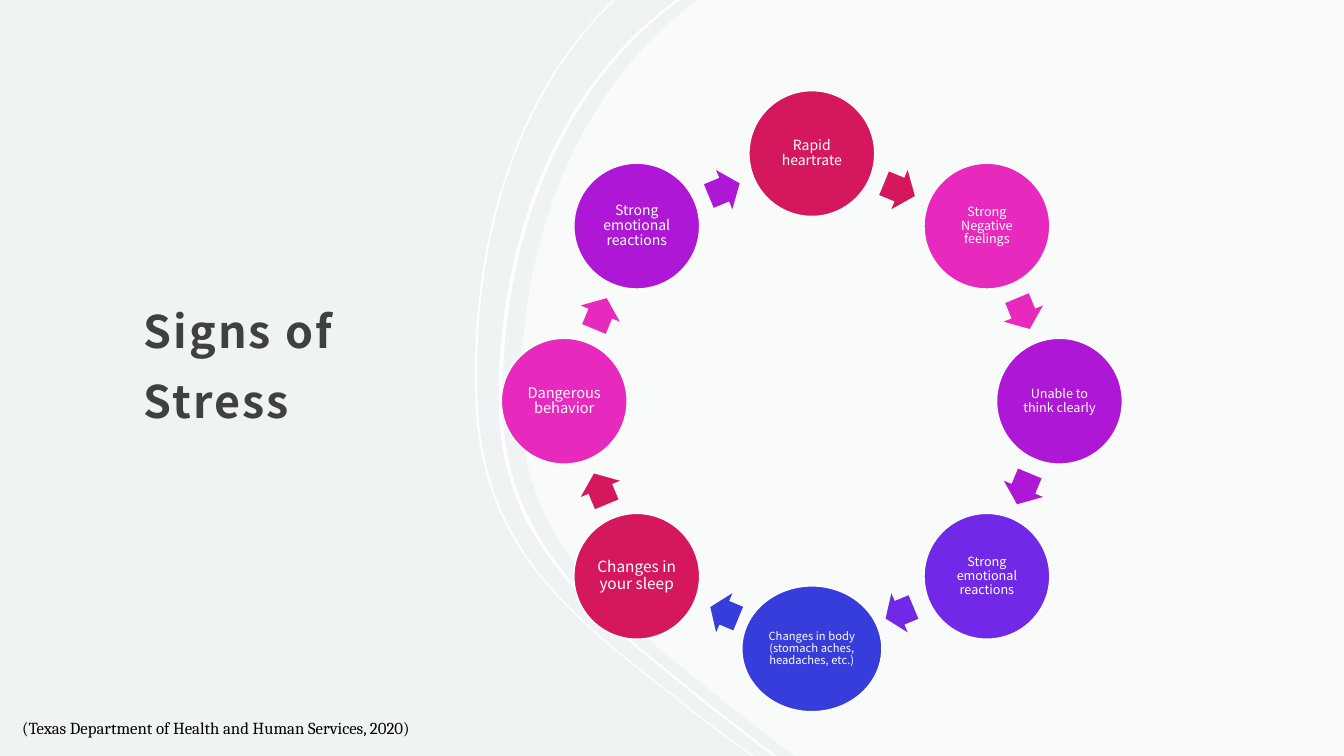
import math
from dataclasses import dataclass

import pptx
import pptx.dml.color
import pptx.enum.shapes
import pptx.enum.text
import pptx.oxml.ns
import pptx.shapes.autoshape
import pptx.slide
import pptx.text.text
import pptx.util
from lxml import etree

Cm = pptx.util.Cm
qn = pptx.oxml.ns.qn
Shape = pptx.shapes.autoshape.Shape
Slide = pptx.slide.Slide
TextFrame = pptx.text.text.TextFrame
MSO_SHAPE = pptx.enum.shapes.MSO_SHAPE
PP_ALIGN = pptx.enum.text.PP_ALIGN
MSO_ANCHOR = pptx.enum.text.MSO_ANCHOR
Point = tuple[float, float]


@dataclass(frozen=True)
class Theme:
    background: str = "F0F3F3"
    white: str = "FFFFFF"
    title: str = "404040"
    source: str = "000000"
    crimson: str = "D5175E"
    pink: str = "E729BE"
    purple: str = "AE17D5"
    violet: str = "7129E7"
    blue: str = "373DDB"
    font: str = "Noto Sans CJK JP"
    source_font: str = "Cambria"
    title_size: float = 32
    source_size: float = 12
    huge: float = 11
    large: float = 10.5
    normal: float = 10
    small: float = 9
    tiny: float = 8


@dataclass(frozen=True)
class Sign:
    text: str
    color: str
    size: float
    width: float = 3.17
    arrow: float = 0.84


THEME = Theme()
SLIDE_W, SLIDE_H = 33.87, 19.05
CENTER_X, CENTER_Y = 20.46, 10.11
RING_RADIUS, ARROW_RADIUS = 6.24, 5.77
CIRCLE_H, ARROW_H = 3.17, 1.07

SIGNS = (
    Sign("Rapid heartrate", THEME.crimson, THEME.normal),
    Sign("Strong Negative feelings", THEME.pink, THEME.small),
    Sign("Unable to think clearly", THEME.purple, THEME.small),
    Sign("Strong emotional reactions", THEME.violet, THEME.small, arrow=0.76),
    Sign("Changes in body (stomach aches, headaches, etc.)", THEME.blue, THEME.tiny, 3.53, 0.76),
    Sign("Changes in your sleep", THEME.crimson, THEME.huge),
    Sign("Dangerous behavior", THEME.pink, THEME.large),
    Sign("Strong emotional reactions", THEME.purple, THEME.normal),
)

EDGE_STEPS = [1, 3, 3, 3, 1]
PANEL_EDGE: list[Point] = [
    (17.6, 0), (17.55, 0.03),
    (14.71, 2.08), (13.11, 5.82), (13.11, 10.06),
    (13.11, 13.82), (15.67, 15.57), (18.31, 17.73),
    (18.8, 18.11), (19.28, 18.49), (19.74, 18.85),
    (20.04, SLIDE_H),
]
OUTER_EDGE: list[Point] = [
    (15.44, 0), (15.37, 0.08),
    (13, 2.39), (11.81, 6.1), (11.99, 10.21),
    (12.17, 14.1), (14.78, 15.82), (17.45, 17.93),
    (17.93, 18.31), (18.42, 18.67), (18.9, 19.02),
    (18.95, SLIDE_H),
]


def rgb(color: str) -> pptx.dml.color.RGBColor:
    return pptx.dml.color.RGBColor.from_string(color)


def paint(sp: Shape, color: str) -> None:
    sp.shadow.inherit = False
    sp.fill.solid()
    sp.fill.fore_color.rgb = rgb(color)
    sp.line.fill.background()


def shift(pts: list[Point], dx: float) -> list[Point]:
    return [(x + dx, y) for x, y in pts]


def bend(sp: Shape, steps: list[int]) -> None:
    lines = iter(list(sp._element.iter(qn("a:lnTo"))))
    for count in steps:
        first, *others = [next(lines) for _ in range(count)]
        if others:
            first.tag = qn("a:cubicBezTo")
        for line in others:
            first.append(line[0])
            line.getparent().remove(line)


def add_outline(s: Slide, pts: list[Point], steps: list[int]) -> Shape:
    corners = [(Cm(x), Cm(y)) for x, y in pts]
    builder = s.shapes.build_freeform(*corners[0])
    builder.add_line_segments(corners[1:], close=True)
    sp = builder.convert_to_shape()
    bend(sp, steps)
    paint(sp, THEME.white)
    return sp


def add_band(s: Slide, edge: list[Point], width: float) -> None:
    add_outline(s, edge + shift(edge, width)[::-1], EDGE_STEPS + [1] + EDGE_STEPS)


def set_opacity(sp: Shape, percent: int) -> None:
    color = next(sp._element.iter(qn("a:srgbClr")))
    etree.SubElement(color, qn("a:alpha")).set("val", str(percent * 1000))


def add_backdrop(s: Slide) -> None:
    s.background.fill.solid()
    s.background.fill.fore_color.rgb = rgb(THEME.background)
    corners = [(SLIDE_W, SLIDE_H), (SLIDE_W, 0)]
    panel = add_outline(s, PANEL_EDGE + corners, EDGE_STEPS + [1, 1])
    set_opacity(panel, 60)
    add_band(s, OUTER_EDGE, 0.05)
    add_band(s, shift(PANEL_EDGE, -0.54), 0.09)


def set_margins(tf: TextFrame, margin: float) -> None:
    tf.margin_left = tf.margin_right = tf.margin_top = tf.margin_bottom = Cm(margin)


def write(tf: TextFrame, text: str, size: float, color: str, font: str = THEME.font,
          bold: bool = False, spacing: float = 1.0, align: PP_ALIGN = PP_ALIGN.LEFT,
          anchor: MSO_ANCHOR = MSO_ANCHOR.MIDDLE) -> pptx.text.text._Run:
    tf.word_wrap = True
    tf.vertical_anchor = anchor
    p = tf.paragraphs[0]
    p.alignment = align
    p.line_spacing = spacing
    r = p.add_run()
    r.text = text
    r.font.name = font
    r.font.size = pptx.util.Pt(size)
    r.font.bold = bold
    r.font.color.rgb = rgb(color)
    return r


def add_centered(s: Slide, kind: MSO_SHAPE, radius: float, angle: float,
                 width: float, height: float, color: str) -> Shape:
    x = CENTER_X + radius * math.sin(math.radians(angle))
    y = CENTER_Y - radius * math.cos(math.radians(angle))
    sp = s.shapes.add_shape(kind, Cm(x - width / 2), Cm(y - height / 2), Cm(width), Cm(height))
    paint(sp, color)
    return sp


def add_sign(s: Slide, sign: Sign, angle: float, step: float) -> None:
    circle = add_centered(s, MSO_SHAPE.OVAL, RING_RADIUS, angle, sign.width, CIRCLE_H, sign.color)
    circle.line.color.rgb = rgb(THEME.white)
    circle.line.width = pptx.util.Pt(1)
    set_margins(circle.text_frame, 0.03)
    write(circle.text_frame, sign.text, sign.size, THEME.white, spacing=0.9, align=PP_ALIGN.CENTER)
    turn = angle + step / 2
    arrow = add_centered(s, MSO_SHAPE.RIGHT_ARROW, ARROW_RADIUS, turn, sign.arrow, ARROW_H, sign.color)
    arrow.adjustments[0] = 0.6
    arrow.adjustments[1] = 0.5
    arrow.rotation = turn


def main() -> None:
    prs = pptx.Presentation()
    prs.slide_width, prs.slide_height = Cm(SLIDE_W), Cm(SLIDE_H)
    s = prs.slides.add_slide(prs.slide_layouts[6])
    add_backdrop(s)
    title = s.shapes.add_textbox(Cm(3.32), Cm(3.07), Cm(8.38), Cm(11.89))
    set_margins(title.text_frame, 0.3)
    r = write(title.text_frame, "Signs of Stress", THEME.title_size, THEME.title, bold=True, spacing=1.3)
    r.font._element.set("spc", "150")
    step = 360 / len(SIGNS)
    for i, sign in enumerate(SIGNS):
        add_sign(s, sign, i * step, step)
    source = s.shapes.add_textbox(Cm(0.31), Cm(17.96), Cm(16.92), Cm(0.76))
    write(source.text_frame, "(Texas Department of Health and Human Services, 2020)",
          THEME.source_size, THEME.source, THEME.source_font, anchor=MSO_ANCHOR.TOP)
    prs.save("out.pptx")


if __name__ == "__main__":
    main()
